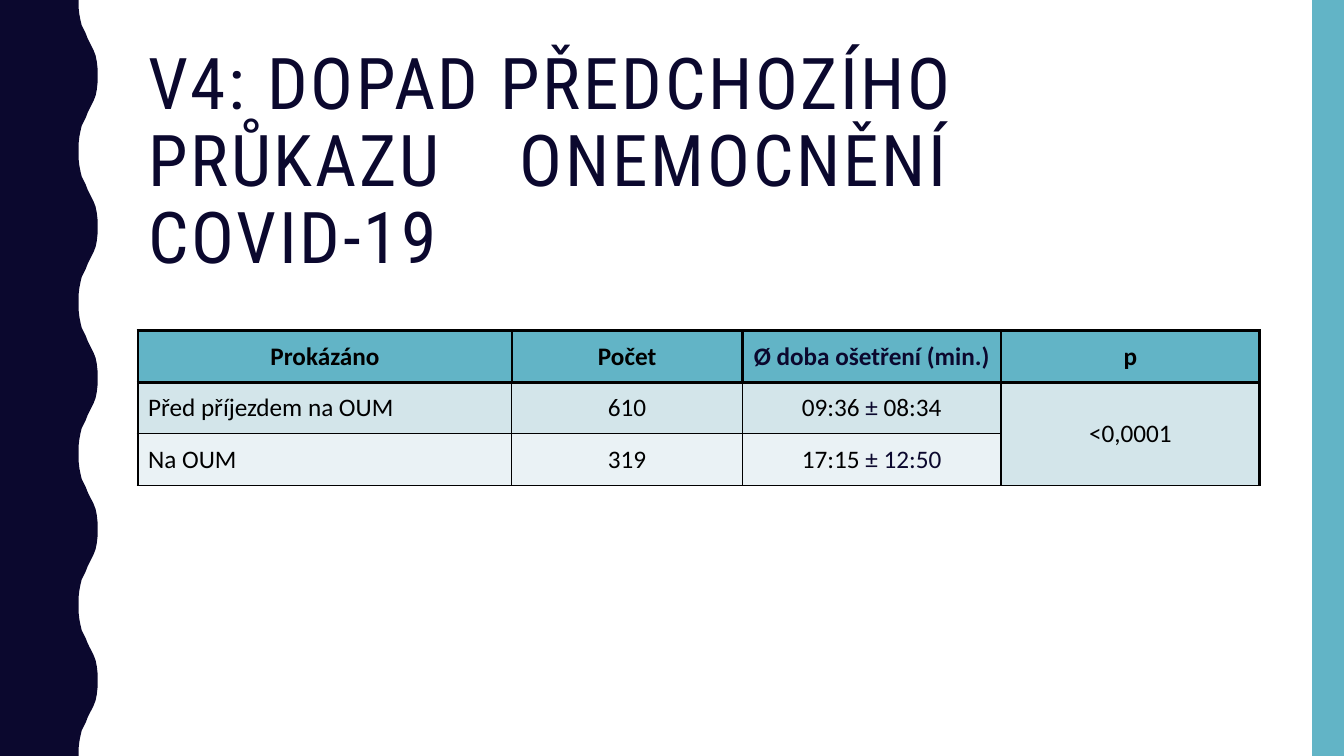
import dataclasses

import lxml.etree
import pptx
import pptx.dml.color
import pptx.enum.shapes
import pptx.enum.text
import pptx.oxml.ns
import pptx.util

Cm = pptx.util.Cm
Pt = pptx.util.Pt
ALIGN = pptx.enum.text.PP_ALIGN
ANCHOR = pptx.enum.text.MSO_ANCHOR


@dataclasses.dataclass(frozen=True)
class Theme:
    navy: str = "0B082E"
    teal: str = "62B4C6"
    black: str = "000000"
    band_dark: str = "D3E5EA"
    band_light: str = "EAF2F5"
    title_font: str = "Roboto Condensed"
    body_font: str = "Calibri"
    title_size: float = 51
    body_size: float = 18
    title_tracking: float = 2
    thick: float = 2.25
    thin: float = 1


SLIDE_WIDTH, SLIDE_HEIGHT = 33.87, 19.05
CONTENT_LEFT, CONTENT_WIDTH = 3.48, 28.27
WAVE_COUNT = 5
WAVE_PERIOD = SLIDE_HEIGHT / WAVE_COUNT
HALF_WAVE = [
    (1.98, 0), (1.98, 0.18), (2.0, 0.36), (2.03, 0.51), (2.06, 0.64),
    (2.11, 0.74), (2.16, 0.84), (2.21, 0.97), (2.26, 1.07), (2.31, 1.17),
    (2.36, 1.27), (2.41, 1.4), (2.44, 1.55), (2.46, 1.73), (2.46, 1.9),
]


def rgb(color):
    return pptx.dml.color.RGBColor.from_string(color)


class SlideBuilder:
    def __init__(self, slide, theme):
        self.slide = slide
        self.theme = theme

    def paint(self, shape, color):
        shape.shadow.inherit = False
        shape.fill.solid()
        shape.fill.fore_color.rgb = rgb(color)
        shape.line.fill.background()

    def wavy_edge(self):
        wave = HALF_WAVE + [(x, WAVE_PERIOD - y) for x, y in reversed(HALF_WAVE)]
        edge = [(x, y + WAVE_PERIOD * index) for index in range(WAVE_COUNT) for x, y in wave]
        outline = edge + [(0, SLIDE_HEIGHT)]
        builder = self.slide.shapes.build_freeform(0, 0)
        builder.add_line_segments([(Cm(x), Cm(y)) for x, y in outline], close=True)
        self.paint(builder.convert_to_shape(), self.theme.navy)

    def rectangle(self, left, top, width, height, color):
        shape = self.slide.shapes.add_shape(
            pptx.enum.shapes.MSO_SHAPE.RECTANGLE, Cm(left), Cm(top), Cm(width), Cm(height))
        self.paint(shape, color)

    def style_run(self, run, font, size, color, bold=False):
        run.font.name = font
        run.font.size = Pt(size)
        run.font.bold = bold
        run.font.color.rgb = rgb(color)

    def title(self, text, left, top, width, height):
        shape = self.slide.shapes.title
        shape.left, shape.top, shape.width, shape.height = map(Cm, (left, top, width, height))
        frame = shape.text_frame
        frame.text = text
        frame.word_wrap = True
        frame.auto_size = pptx.enum.text.MSO_AUTO_SIZE.NONE
        frame.vertical_anchor = ANCHOR.TOP
        paragraph = frame.paragraphs[0]
        paragraph.alignment = ALIGN.LEFT
        paragraph.line_spacing = 0.9
        run = paragraph.runs[0]
        self.style_run(run, self.theme.title_font, self.theme.title_size, self.theme.navy)
        run.font._element.set("spc", str(self.theme.title_tracking * 100))

    def borders(self, cell, widths):
        properties = cell._tc.get_or_add_tcPr()
        for side, width in zip("LRTB", widths):
            line = lxml.etree.SubElement(
                properties, pptx.oxml.ns.qn(f"a:ln{side}"), w=str(Pt(width)))
            fill = lxml.etree.SubElement(line, pptx.oxml.ns.qn("a:solidFill"))
            lxml.etree.SubElement(fill, pptx.oxml.ns.qn("a:srgbClr"), val=self.theme.black)

    def cell(self, cell, runs, fill, bold, alignment):
        cell.fill.solid()
        cell.fill.fore_color.rgb = rgb(fill)
        cell.vertical_anchor = ANCHOR.MIDDLE
        paragraph = cell.text_frame.paragraphs[0]
        paragraph.alignment = alignment
        for text, color in runs:
            run = paragraph.add_run()
            run.text = text
            self.style_run(run, self.theme.body_font, self.theme.body_size, color, bold)

    def table(self, rows, fills, left, top, column_widths, row_height):
        last = len(column_widths) - 1
        table = self.slide.shapes.add_table(
            len(rows), len(column_widths), Cm(left), Cm(top),
            Cm(sum(column_widths)), Cm(row_height * len(rows))).table
        table.first_row = table.horz_banding = False
        for column, width in zip(table.columns, column_widths):
            column.width = Cm(width)
        for row_index, (row, fill) in enumerate(zip(rows, fills)):
            table.rows[row_index].height = Cm(row_height)
            header = row_index == 0
            for column_index, runs in enumerate(row):
                cell = table.cell(row_index, column_index)
                heavy = (
                    header or column_index in (0, last),
                    header or column_index >= last - 1,
                    row_index <= 1,
                    header,
                )
                self.borders(cell, [self.theme.thick if side else self.theme.thin for side in heavy])
                centred = header or column_index > 0
                self.cell(cell, runs, fill, header, ALIGN.CENTER if centred else ALIGN.LEFT)
        table.cell(1, last).merge(table.cell(len(rows) - 1, last))


def main():
    theme = Theme()
    black, navy = theme.black, theme.navy
    presentation = pptx.Presentation()
    presentation.slide_width = Cm(SLIDE_WIDTH)
    presentation.slide_height = Cm(SLIDE_HEIGHT)
    slide = presentation.slides.add_slide(presentation.slide_layouts.get_by_name("Title Only"))
    builder = SlideBuilder(slide, theme)
    builder.wavy_edge()
    builder.rectangle(33.07, 0, 0.8, SLIDE_HEIGHT, theme.teal)
    builder.title("V4: DOPAD PŘEDCHOZÍHO PRŮKAZU \t ONEMOCNĚNÍ COVID-19",
                  CONTENT_LEFT, 1.07, CONTENT_WIDTH, 4.14)
    rows = [
        [[("Prokázáno", black)], [("Počet", black)],
         [("Ø doba ošetření (min.)", navy)], [("p", black)]],
        [[("Před příjezdem na OUM", black)], [("610", black)],
         [("09:36 ", black), ("± ", navy), ("08:34", black)], [("<0,0001", black)]],
        [[("Na OUM", black)], [("319", black)],
         [("17:15 ", black), ("± 12:50", navy)], []],
    ]
    builder.table(rows, [theme.teal, theme.band_dark, theme.band_light],
                  CONTENT_LEFT, 8.33, [9.42, 5.81, 6.52, 6.52], 1.3)
    presentation.save("out.pptx")


if __name__ == "__main__":
    main()
